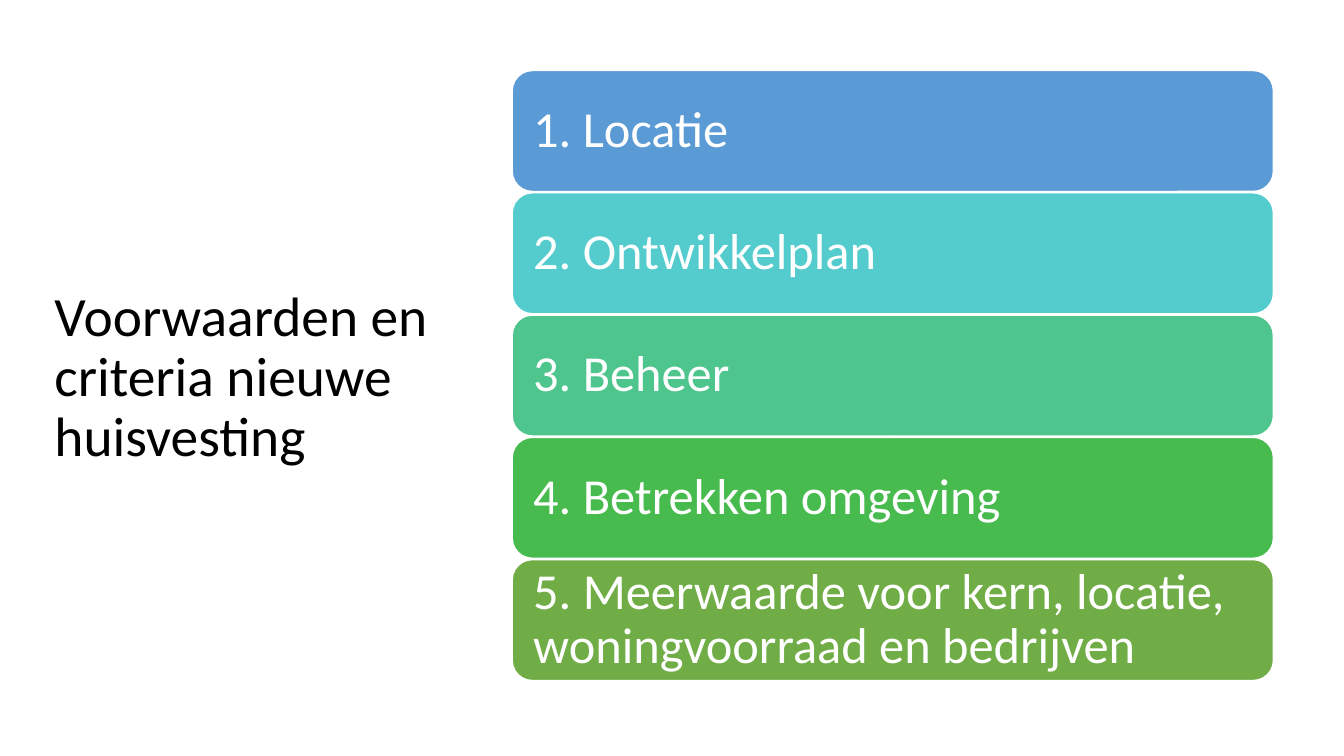
from pptx import Presentation
from pptx.dml.color import RGBColor
from pptx.enum.shapes import MSO_SHAPE
from pptx.enum.text import MSO_ANCHOR, PP_ALIGN
from pptx.util import Inches, Pt

ROUNDED = MSO_SHAPE.ROUNDED_RECTANGLE
MIDDLE = MSO_ANCHOR.MIDDLE
LEFT = PP_ALIGN.LEFT

COLORS = {
    "black": "000000",
    "white": "FFFFFF",
    "blue": "5B9BD5",
    "turquoise": "54CCCD",
    "sea green": "4DC58D",
    "green": "48BB4F",
    "olive": "70AD47",
}

CRITERIA = [
    ("1. Locatie", "blue"),
    ("2. Ontwikkelplan", "turquoise"),
    ("3. Beheer", "sea green"),
    ("4. Betrekken omgeving", "green"),
    ("5. Meerwaarde voor kern, locatie, woningvoorraad en bedrijven", "olive"),
]


def color(name):
    return RGBColor.from_string(COLORS[name])


def write(frame, text, size, color_name):
    frame.text = text
    frame.word_wrap = True
    frame.vertical_anchor = MIDDLE
    paragraph = frame.paragraphs[0]
    paragraph.alignment = LEFT
    paragraph.line_spacing = 0.9
    font = paragraph.runs[0].font
    font.name = "Calibri"
    font.size = Pt(size)
    font.color.rgb = color(color_name)


prs = Presentation()
prs.slide_width = Inches(13.33)
prs.slide_height = Inches(7.5)
slide = prs.slides.add_slide(prs.slide_layouts[5])

# Title on the left
title = slide.shapes.title
title.left, title.top = Inches(0.44), Inches(0.7)
title.width, title.height = Inches(4.31), Inches(6.11)
write(title.text_frame, "Voorwaarden en criteria nieuwe huisvesting", 39.6, "black")

# Stacked bars, one per criterion
BAR_TOP, BAR_PITCH = 0.7, 1.213
for index, (criterion, fill_name) in enumerate(CRITERIA):
    bar = slide.shapes.add_shape(
        ROUNDED, Inches(5.08), Inches(BAR_TOP + index * BAR_PITCH),
        Inches(7.55), Inches(1.2))
    bar.shadow.inherit = False
    bar.fill.solid()
    bar.fill.fore_color.rgb = color(fill_name)
    bar.line.color.rgb = color("white")
    bar.line.width = Pt(1)
    frame = bar.text_frame
    frame.margin_left = frame.margin_right = Inches(0.15)
    frame.margin_top = frame.margin_bottom = Inches(0)
    write(frame, criterion, 36, "white")

prs.save("out.pptx")
